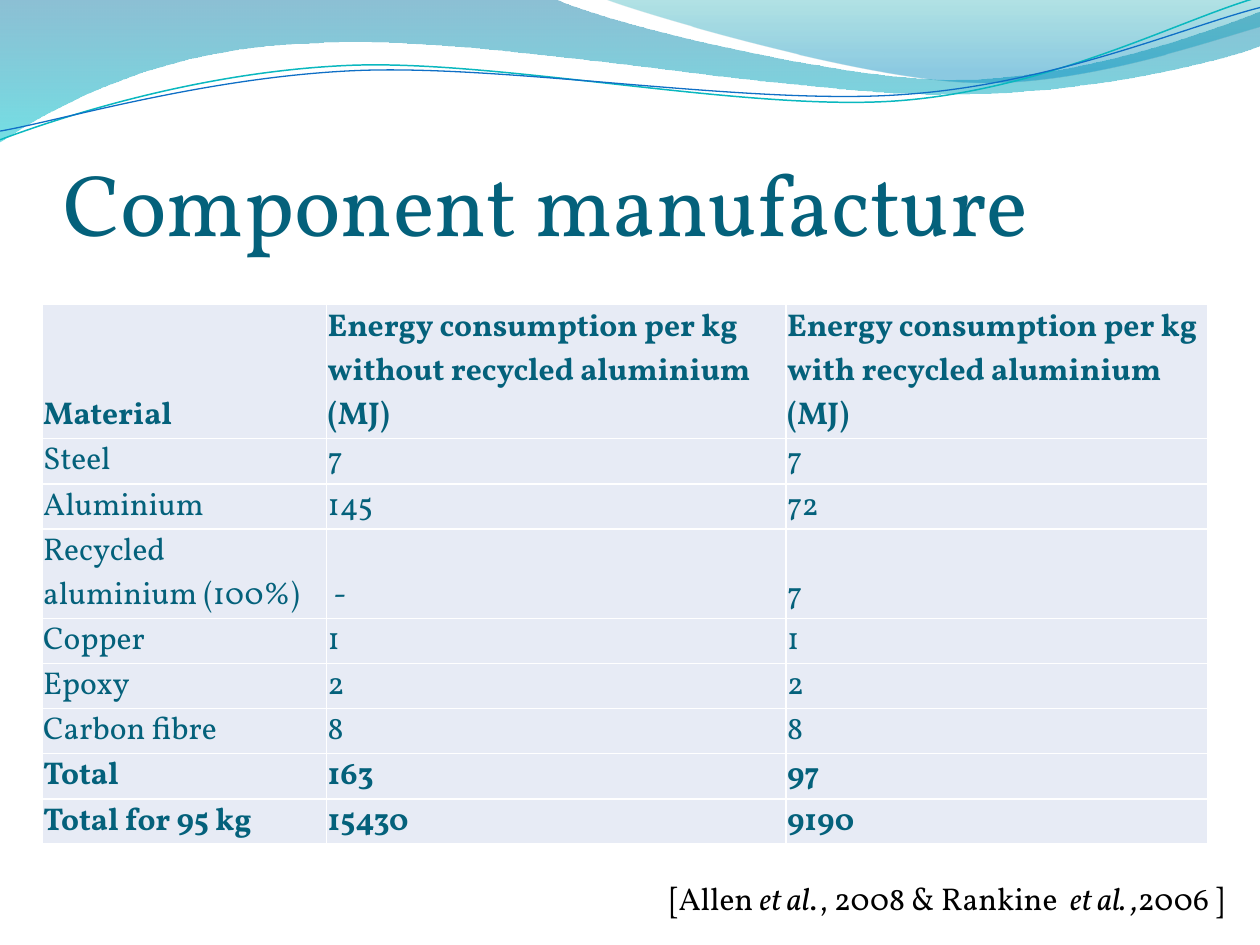
from dataclasses import dataclass

from lxml import etree
from pptx import Presentation
from pptx.dml.color import RGBColor
from pptx.enum.text import MSO_ANCHOR, MSO_AUTO_SIZE, PP_ALIGN
from pptx.oxml.ns import qn
from pptx.util import Pt

BOTTOM, TOP = MSO_ANCHOR.BOTTOM, MSO_ANCHOR.TOP
NO_FIT, GROW = MSO_AUTO_SIZE.NONE, MSO_AUTO_SIZE.SHAPE_TO_FIT_TEXT
LEFT = PP_ALIGN.LEFT
TITLE_ONLY = 5


@dataclass(frozen=True)
class Theme:
    font: str = "Vollkorn"
    heading: str = "04617B"
    cell: str = "E7EBF5"
    border: str = "FFFFFF"
    citation: str = "000000"
    title_size: float = 50
    text_size: float = 18


@dataclass(frozen=True)
class Stop:
    position: float
    color: str
    opacity: int


@dataclass(frozen=True)
class Wave:
    """Start point, then steps of one point (line) or three (Bezier curve)."""
    start: tuple
    steps: list
    stops: tuple = ()
    line: str = ""
    weight: float = 0


THEME = Theme()

WAVES = [
    # Wide band behind
    Wave((0, 0), [
        [(316.8, -0.7)],
        [(342.7, 12.2), (478.1, 45.4), (545.8, 45.4)],
        [(614.2, 45.4), (689.8, 18.7), (720, 6.5)],
        [(720.7, 25.9)],
        [(707.8, 31.7), (626.4, 54.7), (537.1, 54)],
        [(447.8, 54), (275, 20.2), (185, 24.5)],
        [(92.9, 25.9), (33.1, 59.8), (-0.7, 81.4)],
    ], stops=(Stop(0, "0074A1", 45), Stop(1, "00C6CF", 55))),
    # Crest at the upper right
    Wave((344.9, -0.7), [
        [(366.5, 7.9), (491, 44.6), (553.7, 46.8)],
        [(616.3, 49.7), (691.9, 23), (720, 15.1)],
        [(720, 0)],
    ], stops=(Stop(0, "00A1A9", 30), Stop(0.8, "008BBF", 45))),
    # Thin lines
    Wave((0, 79.9), [
        [(34.6, 67), (113.8, 41), (199.4, 37.4)],
        [(284.4, 33.8), (427, 64.1), (513.4, 57.6)],
        [(599.8, 51.1), (675.4, 10.8), (718.6, -1.4)],
    ], line="0AB8BF", weight=0.85),
    Wave((0, 74.9), [
        [(33.8, 69.1), (118.1, 43.9), (203.8, 40.3)],
        [(290.2, 36.7), (429.8, 60.5), (516.2, 54)],
        [(601.9, 48.2), (677.5, 15.1), (720, 4.3)],
    ], line="0F6FC6", weight=0.75),
]

COLUMN_WIDTHS = (162.6, 262.5, 241)
ROW_HEIGHT = 25.55
ENERGY_ROWS = [
    ("Material", "Energy consumption per kg without recycled aluminium (MJ)",
     "Energy consumption per kg with recycled aluminium (MJ)"),
    ("Steel", "7", "7"),
    ("Aluminium", "145", "72"),
    ("Recycled aluminium (100%)", " -", "7"),
    ("Copper", "1", "1"),
    ("Epoxy", "2", "2"),
    ("Carbon fibre", "8", "8"),
    ("Total", "163", "97"),
    ("Total for 95 kg", "15430", "9190"),
]
LINES_IN_ROW = {0: 3, 3: 2}
BOLD_ROWS = {0, 7, 8}

CITATION = [("[Allen ", False), ("et al", True), ("., 2008 & Rankine  ", False),
            ("et al. ,", True), ("2006 ]", False)]


def rgb(color: str) -> RGBColor:
    return RGBColor.from_string(color)


def add_run(paragraph, text: str, size: float, color: str,
            bold: bool = False, italic: bool = False) -> None:
    run = paragraph.add_run()
    run.text = text
    font = run.font
    font.name, font.size = THEME.font, Pt(size)
    font.bold, font.italic = bold, italic
    font.color.rgb = rgb(color)


def set_margins(target, left: float, top: float, right: float, bottom: float) -> None:
    target.margin_left, target.margin_top = Pt(left), Pt(top)
    target.margin_right, target.margin_bottom = Pt(right), Pt(bottom)


def bend_curves(shape, steps: list) -> None:
    """Merge the three line segments of each curved step into one Bezier."""
    segments = iter(list(shape._element.iter(qn("a:lnTo"))))
    for step in steps:
        parts = [next(segments) for _ in step]
        if len(parts) == 1:
            continue
        curve = etree.Element(qn("a:cubicBezTo"))
        parts[0].addprevious(curve)
        for part in parts:
            curve.append(part[0])
            part.getparent().remove(part)


def add_wave(shapes, wave: Wave) -> None:
    builder = shapes.build_freeform(*map(Pt, wave.start))
    builder.add_line_segments([(Pt(x), Pt(y)) for step in wave.steps for x, y in step],
                              close=bool(wave.stops))
    shape = builder.convert_to_shape()
    bend_curves(shape, wave.steps)
    shape.shadow.inherit = False
    if not wave.stops:
        shape.fill.background()
        shape.line.color.rgb = rgb(wave.line)
        shape.line.width = Pt(wave.weight)
        return
    shape.line.fill.background()
    shape.fill.gradient()
    shape.fill.gradient_angle = 270
    for target, stop in zip(shape.fill.gradient_stops, wave.stops):
        target.position = stop.position
        target.color.rgb = rgb(stop.color)
    colors = shape.fill._xPr.iter(qn("a:srgbClr"))
    for color, stop in zip(colors, wave.stops):
        etree.SubElement(color, qn("a:alpha"), val=str(stop.opacity * 1000))


def add_borders(cell) -> None:
    properties = cell._tc.get_or_add_tcPr()
    for index, side in enumerate(("lnL", "lnR", "lnT", "lnB")):
        border = etree.Element(qn(f"a:{side}"), w=str(Pt(1)))
        fill = etree.SubElement(border, qn("a:solidFill"))
        etree.SubElement(fill, qn("a:srgbClr"), val=THEME.border)
        properties.insert(index, border)


def add_energy_table(shapes) -> None:
    heights = [ROW_HEIGHT * LINES_IN_ROW.get(r, 1) for r in range(len(ENERGY_ROWS))]
    table = shapes.add_table(len(ENERGY_ROWS), len(COLUMN_WIDTHS), Pt(24), Pt(174),
                             Pt(sum(COLUMN_WIDTHS)), Pt(sum(heights))).table
    table.first_row = table.horz_banding = False
    for column, width in zip(table.columns, COLUMN_WIDTHS):
        column.width = Pt(width)
    for r, (row, values) in enumerate(zip(table.rows, ENERGY_ROWS)):
        row.height = Pt(heights[r])
        for cell, value in zip(row.cells, values):
            cell.fill.solid()
            cell.fill.fore_color.rgb = rgb(THEME.cell)
            cell.vertical_anchor = BOTTOM
            set_margins(cell, 0.7, 0.7, 0.7, 0)
            add_borders(cell)
            add_run(cell.text_frame.paragraphs[0], value, THEME.text_size,
                    THEME.heading, bold=r in BOLD_ROWS)


def add_title(title) -> None:
    title.left, title.top, title.width, title.height = Pt(36), Pt(55.4), Pt(648), Pt(90)
    frame = title.text_frame
    frame.auto_size, frame.vertical_anchor = NO_FIT, BOTTOM
    set_margins(frame, 0, 3.6, 0, 0)
    heading = frame.paragraphs[0]
    heading.alignment = LEFT
    add_run(heading, "Component manufacture", THEME.title_size, THEME.heading)


def add_citation(shapes) -> None:
    frame = shapes.add_textbox(Pt(375.8), Pt(499), Pt(343.4), Pt(29)).text_frame
    frame.word_wrap, frame.auto_size, frame.vertical_anchor = False, GROW, TOP
    for text, italic in CITATION:
        add_run(frame.paragraphs[0], text, THEME.text_size, THEME.citation, italic=italic)


def main() -> None:
    deck = Presentation()
    deck.slide_width, deck.slide_height = Pt(720), Pt(540)
    slide = deck.slides.add_slide(deck.slide_layouts[TITLE_ONLY])
    for wave in WAVES:
        add_wave(slide.shapes, wave)
    add_title(slide.shapes.title)
    add_energy_table(slide.shapes)
    add_citation(slide.shapes)
    deck.save("out.pptx")


if __name__ == "__main__":
    main()
